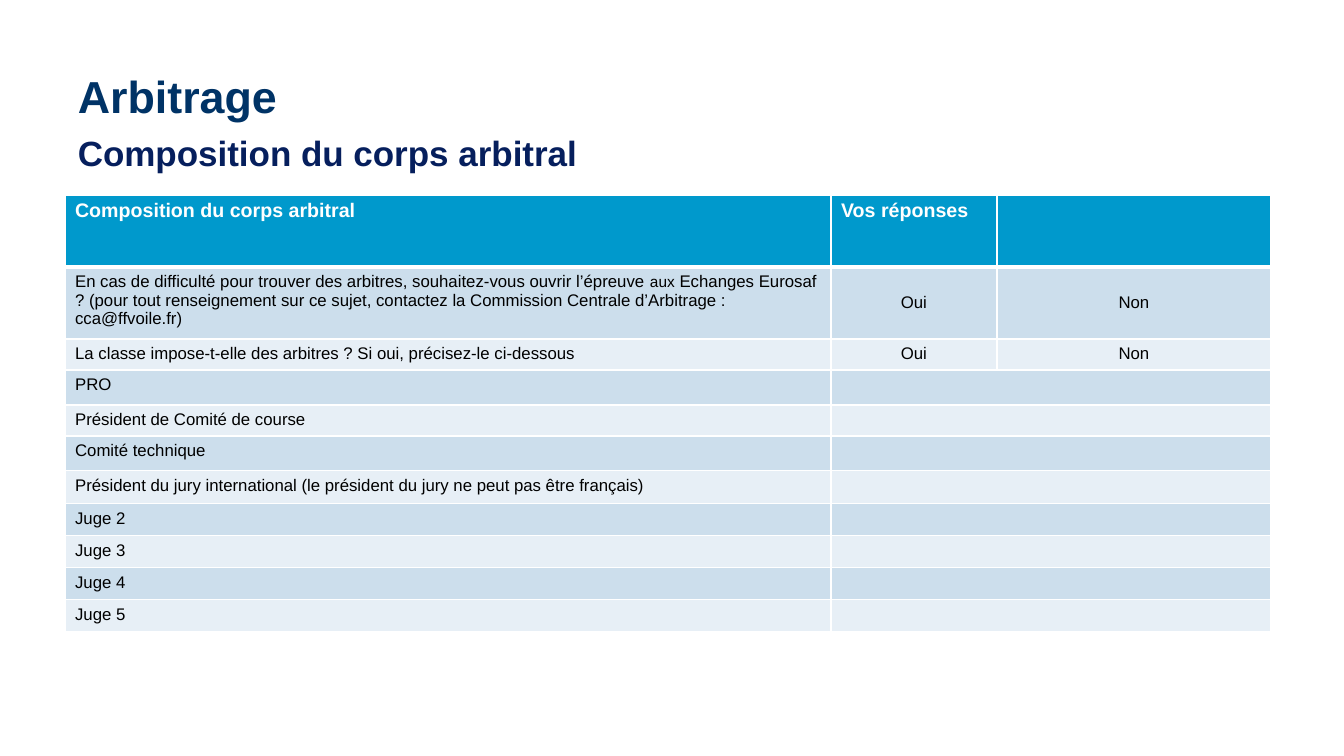
from lxml.etree import SubElement
from pptx import Presentation
from pptx.dml.color import RGBColor
from pptx.enum.text import MSO_ANCHOR, PP_ALIGN
from pptx.oxml import parse_xml
from pptx.oxml.ns import nsdecls, qn
from pptx.util import Emu, Pt

EMU_PER_PX = 914400 / 100.8
FONT = "Arial"
NAVY = RGBColor(0x00, 0x33, 0x66)
INDIGO = RGBColor(0x06, 0x1F, 0x5D)
BLACK = RGBColor(0x00, 0x00, 0x00)
WHITE = RGBColor(0xFF, 0xFF, 0xFF)
HEADER_BLUE = RGBColor(0x00, 0x99, 0xCC)
BANDS = (RGBColor(0xE7, 0xEF, 0xF6), RGBColor(0xCC, 0xDE, 0xEC))

COLUMN_WIDTHS = (766, 166, 274)
ROW_HEIGHTS = (72, 72, 31, 35, 31, 35, 33, 32, 32, 32, 32)
FIRST_MERGED_ROW = 3
EUROSAF_PARTS = (
    ("En cas de difficulté pour trouver des arbitres, souhaitez-vous ouvrir l’épreuve ", 12),
    ("aux", 11),
    (" Echanges Eurosaf ? (pour tout renseignement sur ce sujet, contactez "
     "la Commission Centrale d’Arbitrage : cca@ffvoile.fr)", 12),
)
ROWS = (
    ("Composition du corps arbitral", "Vos réponses", ""),
    (EUROSAF_PARTS, "Oui", "Non"),
    ("La classe impose-t-elle des arbitres ? Si oui, précisez-le ci-dessous", "Oui", "Non"),
    ("PRO", "", ""),
    ("Président de Comité de course", "", ""),
    ("Comité technique", "", ""),
    ("Président du jury international (le président du jury ne peut pas être français)", "", ""),
    *((f"Juge {number}", "", "") for number in range(2, 6)),
)


def px(length):
    return Emu(round(length * EMU_PER_PX))


def format_run(run, size, color, bold):
    run.font.name = FONT
    run.font.size = Pt(size)
    run.font.color.rgb = color
    run.font.bold = bold


def add_heading(slide, text, box, size, color, anchor):
    heading = slide.shapes.add_textbox(*map(px, box)).text_frame
    heading.word_wrap = True
    heading.vertical_anchor = anchor
    heading.margin_top = heading.margin_bottom = px(5)
    heading.text = text
    format_run(heading.paragraphs[0].runs[0], size, color, True)


def set_borders(cell, widths):
    """Draw white borders; widths are points for left, right, top, bottom."""
    properties = cell._tc.get_or_add_tcPr()
    for position, (side, width) in enumerate(zip("LRTB", widths)):
        border = parse_xml(f'<a:ln{side} {nsdecls("a")} w="{Pt(width)}"/>')
        fill = SubElement(border, qn("a:solidFill"))
        SubElement(fill, qn("a:srgbClr"), val=str(WHITE))
        properties.insert(position, border)


def fill_cell(cell, content, row, column):
    is_header = row == 0
    size, color = (14, WHITE) if is_header else (12, BLACK)
    cell.fill.solid()
    cell.fill.fore_color.rgb = HEADER_BLUE if is_header else BANDS[row % 2]
    set_borders(cell, (1, 1, 3 if row == 1 else 1, 3 if is_header else 1))

    paragraph = cell.text_frame.paragraphs[0]
    if not content:
        # Keeps an empty cell from forcing its row taller.
        paragraph._p.get_or_add_endParaRPr().set("sz", str(size * 100))
        return
    parts = ((content, size),) if isinstance(content, str) else content
    for text, part_size in parts:
        run = paragraph.add_run()
        run.text = text
        format_run(run, part_size, color, is_header)
    if column and not is_header:
        paragraph.alignment = PP_ALIGN.CENTER
        if row == 1:
            cell.vertical_anchor = MSO_ANCHOR.MIDDLE


def add_referee_table(slide, left, top):
    table = slide.shapes.add_table(
        len(ROWS), len(COLUMN_WIDTHS), px(left), px(top),
        px(sum(COLUMN_WIDTHS)), px(sum(ROW_HEIGHTS))).table
    for column, width in zip(table.columns, COLUMN_WIDTHS):
        column.width = px(width)
    for row, height in zip(table.rows, ROW_HEIGHTS):
        row.height = px(height)
    for row, contents in enumerate(ROWS):
        for column, content in enumerate(contents):
            fill_cell(table.cell(row, column), content, row, column)
        if row >= FIRST_MERGED_ROW:
            table.cell(row, 1).merge(table.cell(row, 2))


def main():
    presentation = Presentation()
    presentation.slide_width = px(1344)
    presentation.slide_height = px(756)
    slide = presentation.slides.add_slide(presentation.slide_layouts[6])
    add_heading(slide, "Arbitrage", (68, 60, 1210, 72), 32, NAVY, MSO_ANCHOR.MIDDLE)
    add_referee_table(slide, 65, 195)
    add_heading(slide, "Composition du corps arbitral", (68, 148, 1205, 31), 25, INDIGO,
                MSO_ANCHOR.BOTTOM)
    presentation.save("out.pptx")


if __name__ == "__main__":
    main()
